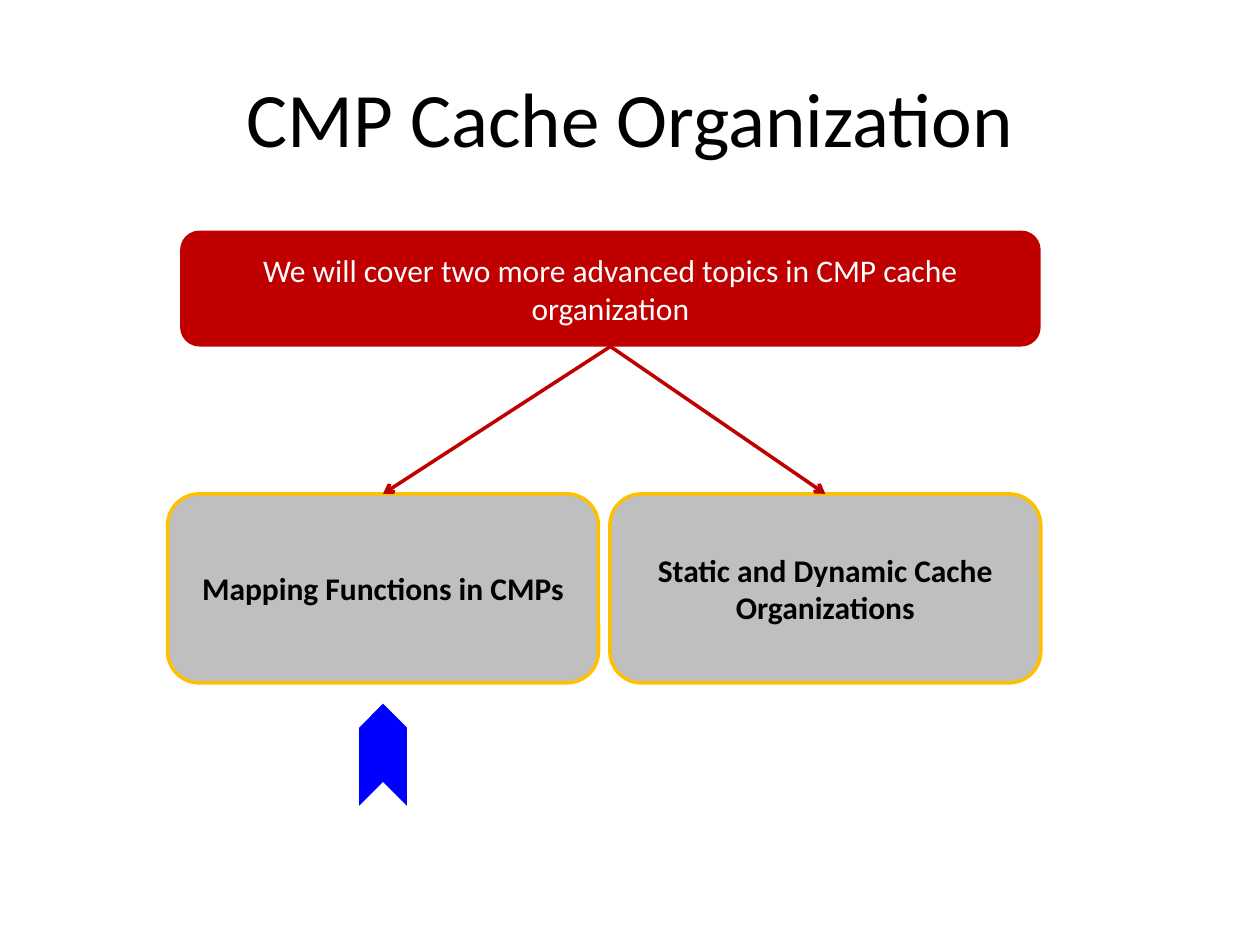
from lxml.etree import SubElement
from pptx import Presentation
from pptx.dml.color import RGBColor
from pptx.enum.shapes import MSO_CONNECTOR, MSO_SHAPE
from pptx.enum.text import MSO_ANCHOR, PP_ALIGN
from pptx.oxml.ns import qn
from pptx.util import Inches, Pt

# Content
TITLE = "CMP Cache Organization"
INTRO = "We will cover two more advanced topics in CMP cache organization"
TOPICS = ["Mapping Functions in CMPs", "Static and Dynamic Cache Organizations"]

# Look
FONT = "Calibri"
RED = RGBColor(0xC0, 0x00, 0x00)
GREY = RGBColor(0xBF, 0xBF, 0xBF)
GOLD = RGBColor(0xFF, 0xC0, 0x00)
BLUE = RGBColor(0x00, 0x00, 0xFF)
BLACK = RGBColor(0x00, 0x00, 0x00)
WHITE = RGBColor(0xFF, 0xFF, 0xFF)

# Layout in inches
LEFT, TOP, WIDE, HIGH, GAP = 1.33, 3.92, 3.42, 1.5, 0.09
MARK_W, MARK_H, MARK_Y = 0.81, 0.38, 5.8


def write(shape, text, size, color, bold=False):
    frame = shape.text_frame
    frame.word_wrap = True
    frame.vertical_anchor = MSO_ANCHOR.MIDDLE
    para = frame.paragraphs[0]
    para.alignment = PP_ALIGN.CENTER
    run = para.add_run()
    run.text = text
    font = run.font
    font.name, font.size, font.bold = FONT, Pt(size), bold
    font.color.rgb = color


def add_box(slide, kind, place, fill, edge=None):
    box = slide.shapes.add_shape(kind, *map(Inches, place))
    box.shadow.inherit = False
    box.fill.solid()
    box.fill.fore_color.rgb = fill
    if edge is None:
        box.line.fill.background()
    else:
        box.line.color.rgb = edge
        box.line.width = Pt(2)
    return box


def add_arrow(slide, start, end):
    arrow = slide.shapes.add_connector(MSO_CONNECTOR.STRAIGHT, 0, 0, 0, 0)
    arrow.begin_connect(start, 2)
    arrow.end_connect(end, 0)
    arrow.line.color.rgb = RED
    arrow.line.width = Pt(2)
    SubElement(arrow.line._get_or_add_ln(), qn("a:tailEnd"), type="arrow")
    SubElement(arrow._element.spPr, qn("a:effectLst"))


def main():
    deck = Presentation()
    deck.slide_width, deck.slide_height = Inches(10), Inches(7.5)
    slide = deck.slides.add_slide(deck.slide_layouts[5])

    # Title
    title = slide.shapes.title
    title.left, title.top = Inches(0.5), Inches(0.3)
    title.width, title.height = Inches(9), Inches(1.25)
    write(title, TITLE, 44, BLACK)

    # Intro bar
    intro = add_box(slide, MSO_SHAPE.ROUNDED_RECTANGLE,
                    (1.43, 1.83, 6.83, 0.92), RED)
    write(intro, INTRO, 18, WHITE)

    # Topic boxes, each with an arrow from the bar
    for i, text in enumerate(TOPICS):
        place = (LEFT + i * (WIDE + GAP), TOP, WIDE, HIGH)
        box = add_box(slide, MSO_SHAPE.ROUNDED_RECTANGLE, place, GREY, GOLD)
        write(box, text, 18, BLACK, True)
        add_arrow(slide, intro, box)

    # Marker pointing up at the first topic
    mid = LEFT + WIDE / 2
    mark = add_box(slide, MSO_SHAPE.CHEVRON,
                   (mid - MARK_W / 2, MARK_Y, MARK_W, MARK_H), BLUE)
    mark.rotation = 270

    deck.save("out.pptx")


if __name__ == "__main__":
    main()
